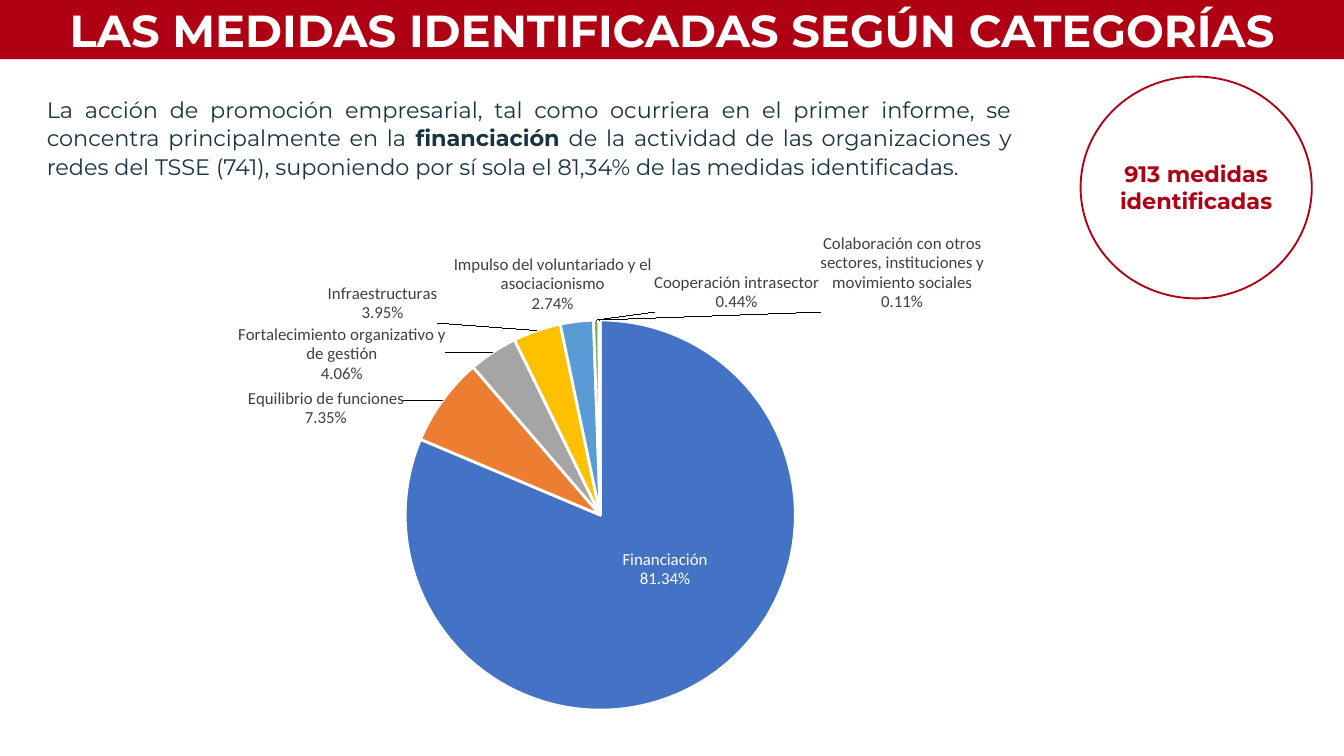
from lxml.etree import SubElement
from pptx import Presentation
from pptx.chart.data import CategoryChartData
from pptx.dml.color import RGBColor
from pptx.enum.chart import XL_CHART_TYPE, XL_LABEL_POSITION
from pptx.enum.shapes import MSO_SHAPE
from pptx.enum.text import MSO_ANCHOR, PP_ALIGN
from pptx.oxml.ns import qn
from pptx.util import Inches, Pt

COLORS = {"red": "B00013", "white": "FFFFFF", "ink": "173440", "label": "404040"}
FONT = "Montserrat"
TITLE = "LAS MEDIDAS IDENTIFICADAS SEGÚN CATEGORÍAS"
TOTAL = "913 medidas identificadas"
INTRO = [
    ("La acción de promoción empresarial, tal como ocurriera en el primer informe, "
     "se concentra principalmente en la ", False),
    ("financiación", True),
    (" de la actividad de las organizaciones y redes del TSSE (741), suponiendo por sí "
     "sola el 81,34% de las medidas identificadas.", False),
]
SLICES = [
    ("Financiación", 81.34, "4472C4", (0.01, -0.05)),
    ("Equilibrio de funciones", 7.35, "ED7D31", (-0.03, 0.06)),
    ("Fortalecimiento organizativo y de gestión", 4.06, "A5A5A5", (-0.04, 0.07)),
    ("Infraestructuras", 3.95, "FFC000", (-0.09, 0)),
    ("Impulso del voluntariado y el asociacionismo", 2.74, "5B9BD5", (0.07, 0)),
    ("Cooperación intrasector", 0.44, "70AD47", (0.13, 0)),
    ("Colaboración con otros sectores, instituciones y movimiento sociales", 0.11,
     "264478", (0.28, 0)),
]
NUMBER_FORMAT = '0.00"%"'
PIE_AREA = {"x": 3 / 8, "y": 7 / 36, "w": 13 / 36, "h": 13 / 18}
WIDTH = 10
HEIGHT = WIDTH * 9 / 16


def color(name):
    return RGBColor.from_string(COLORS.get(name, name))


def style(font, size, name, family=FONT, bold=None):
    font.size, font.name, font.bold = Pt(size), family, bold
    font.color.rgb = color(name)


def add_panel(slide, kind, box, fill, line, text, size, text_color):
    shape = slide.shapes.add_shape(kind, *map(Inches, box))
    shape.shadow.inherit = False
    shape.fill.solid()
    shape.fill.fore_color.rgb = color(fill)
    if line:
        shape.line.color.rgb = color(line)
        shape.line.width = Pt(1)
    else:
        shape.line.fill.background()
    frame = shape.text_frame
    frame.word_wrap = True
    frame.vertical_anchor = MSO_ANCHOR.MIDDLE
    frame.margin_left = frame.margin_right = Inches(0.04)
    frame.margin_top = frame.margin_bottom = Inches(0.02)
    paragraph = frame.paragraphs[0]
    paragraph.text = text
    paragraph.alignment = PP_ALIGN.CENTER
    style(paragraph.font, size, text_color, bold=True)


def add_intro(slide):
    frame = slide.shapes.add_textbox(*map(Inches, (0.25, 0.65, 7.38, 0.74))).text_frame
    frame.word_wrap = True
    paragraph = frame.paragraphs[0]
    paragraph.alignment = PP_ALIGN.JUSTIFY
    paragraph.line_spacing = 1.07
    paragraph.space_before = paragraph.space_after = Pt(6)
    style(paragraph.font, 12, "ink")
    for text, bold in INTRO:
        run = paragraph.add_run()
        run.text = text
        run.font.bold = bold


def set_layout(parent, index, values, inner=False):
    for old in parent.findall(qn("c:layout")):
        parent.remove(old)
    layout = parent.makeelement(qn("c:layout"))
    parent.insert(index, layout)
    manual = SubElement(layout, qn("c:manualLayout"))
    if inner:
        SubElement(manual, qn("c:layoutTarget"), val="inner")
        for axis in "xy":
            SubElement(manual, qn(f"c:{axis}Mode"), val="edge")
    for key, value in values.items():
        SubElement(manual, qn(f"c:{key}"), val=str(value))


def show_name_and_value(labels):
    for tag in ("c:showVal", "c:showCatName"):
        labels.find(qn(tag)).set("val", "1")
    separator = labels.makeelement(qn("c:separator"))
    separator.text = "\n"
    anchor = labels.find(qn("c:showBubbleSize"))
    if anchor is None:
        anchor = labels.find(qn("c:showPercent"))
    anchor.addnext(separator)


def add_pie(slide):
    data = CategoryChartData()
    data.categories = [name for name, *_ in SLICES]
    data.add_series("Series 1", [value for _, value, *_ in SLICES])
    chart = slide.shapes.add_chart(
        XL_CHART_TYPE.PIE, *map(Inches, (0, 1.6, 8.04, 4.02)), data).chart
    chart.has_legend = chart.has_title = False
    chart.font.size, chart.font.name = Pt(10), "Calibri"
    plot = chart.plots[0]
    plot.vary_by_categories = True
    set_layout(chart._chartSpace.chart.plotArea, 0, PIE_AREA, inner=True)

    series = plot.series[0]
    labels = series.data_labels
    labels.number_format, labels.number_format_is_linked = NUMBER_FORMAT, False
    labels.show_value = labels.show_category_name = True
    style(labels.font, 9, "label", "Calibri")
    show_name_and_value(labels._element)
    leader = labels._element.find(qn("c:showLeaderLines"))
    if leader is None:
        leader = SubElement(labels._element, qn("c:showLeaderLines"))
    leader.set("val", "1")

    for index, (_, _, fill, (x, y)) in enumerate(SLICES):
        point = series.points[index]
        point.format.fill.solid()
        point.format.fill.fore_color.rgb = color(fill)
        point.format.line.color.rgb = color("white")
        point.format.line.width = Pt(1.5)
        label = point.data_label
        style(label.font, 9, "label" if index else "white", "Calibri")
        label.position = XL_LABEL_POSITION.OUTSIDE_END if index else XL_LABEL_POSITION.CENTER
        element = labels._element.findall(qn("c:dLbl"))[index]
        set_layout(element, 1, {"x": x, "y": y})
        number = element.makeelement(
            qn("c:numFmt"), {"formatCode": NUMBER_FORMAT, "sourceLinked": "0"})
        element.insert(2, number)
        show_name_and_value(element)


def main():
    presentation = Presentation()
    presentation.slide_width, presentation.slide_height = Inches(WIDTH), Inches(HEIGHT)
    slide = presentation.slides.add_slide(presentation.slide_layouts[6])
    add_panel(slide, MSO_SHAPE.RECTANGLE, (0, 0, WIDTH, 0.44), "red", None,
              TITLE, 24, "white")
    add_panel(slide, MSO_SHAPE.OVAL, (8.04, 0.57, 1.72, 1.65), "white", "red",
              TOTAL, 12, "red")
    add_intro(slide)
    add_pie(slide)
    presentation.save("out.pptx")


if __name__ == "__main__":
    main()
